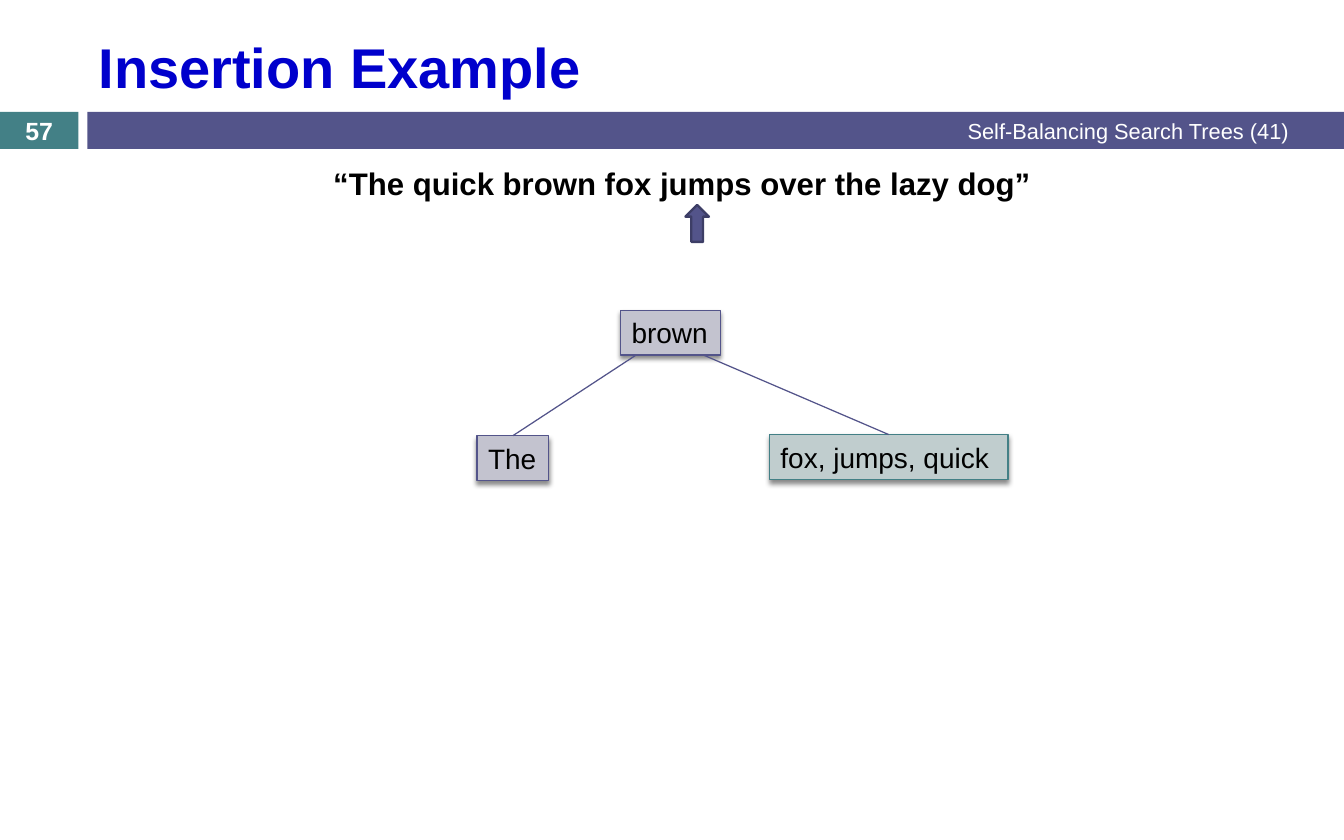
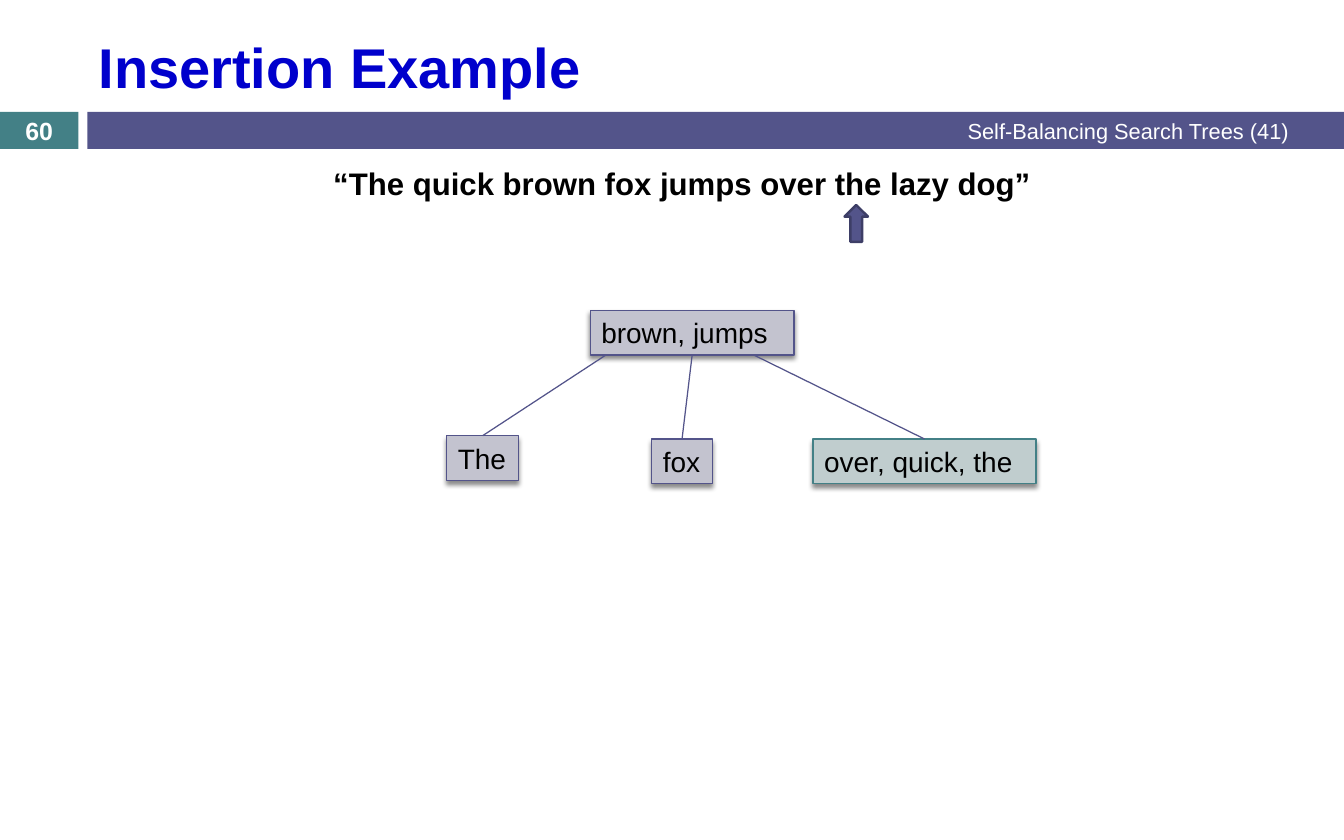
from lxml import etree
from pptx import Presentation
from pptx.dml.color import RGBColor
from pptx.enum.shapes import MSO_CONNECTOR, MSO_SHAPE
from pptx.enum.text import MSO_ANCHOR, MSO_AUTO_SIZE, PP_ALIGN
from pptx.oxml import parse_xml
from pptx.oxml.ns import nsdecls, qn
from pptx.util import Inches, Pt

FONT = "Arial"
INDIGO = RGBColor(0x53, 0x54, 0x8A)
DARK_INDIGO = RGBColor(0x3D, 0x3E, 0x66)
TEAL = RGBColor(0x43, 0x80, 0x86)
PALE_INDIGO = RGBColor(0xC3, 0xC3, 0xCF)
PALE_TEAL = RGBColor(0xC0, 0xCD, 0xCE)
TITLE_BLUE = RGBColor(0x00, 0x00, 0xCC)
BLACK = RGBColor(0x00, 0x00, 0x00)
WHITE = RGBColor(0xFF, 0xFF, 0xFF)

LINE_WIDTH = Pt(0.79)
NODE_HEIGHT = 0.4
ROOT_TOP = 2.77
SENTENCE = "“The quick brown fox jumps over the lazy dog” "
NODE_SHADOW = (
    f'<a:effectLst {nsdecls("a")}>'
    f'<a:outerShdw blurRad="{Pt(3)}" dist="{Pt(2.4)}" dir="5400000" rotWithShape="0">'
    '<a:srgbClr val="000000"><a:alpha val="45000"/></a:srgbClr>'
    "</a:outerShdw></a:effectLst>"
)

# Root: (text, left, width).
# Children: (text, left, top, width, branch start), where a branch start
# of None means the middle of the root's lower side.
TREES = [
    {
        "number": "57",
        "arrow_left": 6.12,
        "root": ("brown", 5.54, 0.89),
        "children": [
            ("The", 4.26, 3.89, 0.64, 5.68),
            ("fox, jumps, quick", 6.87, 3.88, 2.13, 6.28),
        ],
    },
    {
        "number": "60",
        "arrow_left": 7.54,
        "root": ("brown, jumps", 5.27, 1.82),
        "children": [
            ("The", 3.99, 3.89, 0.64, 5.41),
            ("fox", 5.82, 3.92, 0.54, None),
            ("over, quick, the", 7.26, 3.92, 1.99, 6.73),
        ],
    },
]


class TreeDeck:
    def __init__(self):
        self.presentation = Presentation()
        self.presentation.slide_width = Inches(12)
        self.presentation.slide_height = Inches(7.5)
        self.slide = None

    def new_slide(self, number):
        layout = self.presentation.slide_layouts[1]
        self.slide = self.presentation.slides.add_slide(layout)
        self.add_shape(MSO_SHAPE.RECTANGLE, (0, 1, 0.7, 0.33), TEAL)
        self.add_shape(MSO_SHAPE.RECTANGLE, (0.78, 1, 11.22, 0.33), INDIGO)
        self.add_label("Self-Balancing Search Trees (41)", (4.5, 0.99, 7.11, 0.35),
                       14, PP_ALIGN.RIGHT)
        self.add_label(number, (0, 1, 0.7, 0.33), 16, PP_ALIGN.CENTER, bold=True)

    def set_text(self, shape, text, size, color, align=PP_ALIGN.LEFT, bold=False,
                 anchor=MSO_ANCHOR.TOP, wrap=True, fit=MSO_AUTO_SIZE.NONE):
        frame = shape.text_frame
        frame.text = text
        frame.word_wrap = wrap
        frame.auto_size = fit
        frame.vertical_anchor = anchor
        paragraph = frame.paragraphs[0]
        paragraph.alignment = align
        font = paragraph.runs[0].font
        font.name, font.size, font.bold = FONT, Pt(size), bold
        font.color.rgb = color
        return paragraph

    def place(self, shape, box):
        shape.left, shape.top, shape.width, shape.height = map(Inches, box)

    def add_title(self, text):
        title = self.slide.shapes.title
        self.place(title, (0.78, 0.19, 10.7, 0.8))
        self.set_text(title, text, 36, TITLE_BLUE, bold=True, anchor=MSO_ANCHOR.MIDDLE)

    def add_sentence(self, text):
        body = self.slide.placeholders[1]
        self.place(body, (1.67, 1.42, 8.92, 0.5))
        paragraph = self.set_text(body, text, 20, BLACK, PP_ALIGN.CENTER, bold=True)
        paragraph.space_before = Pt(7)
        properties = body.element.find(".//" + qn("a:pPr"))
        properties.set("marL", "0")
        properties.set("indent", "0")
        etree.SubElement(properties, qn("a:buNone"))

    def add_label(self, text, box, size, align, bold=False):
        label = self.slide.shapes.add_textbox(*map(Inches, box))
        self.set_text(label, text, size, WHITE, align, bold, MSO_ANCHOR.MIDDLE)

    def add_shape(self, kind, box, fill, line=None, line_width=LINE_WIDTH):
        shape = self.slide.shapes.add_shape(kind, *map(Inches, box))
        shape.shadow.inherit = False
        shape.fill.solid()
        shape.fill.fore_color.rgb = fill
        if line is None:
            shape.line.fill.background()
        else:
            shape.line.color.rgb = line
            shape.line.width = line_width
        return shape

    def add_word_arrow(self, left):
        self.add_shape(MSO_SHAPE.UP_ARROW, (left, 1.83, 0.21, 0.33),
                       INDIGO, DARK_INDIGO, Pt(1.5))

    def add_node(self, text, left, top, width):
        """Add a tree node; one that holds three words is overfull and teal."""
        words = len(text.split(", "))
        fill, line = (PALE_TEAL, TEAL) if words == 3 else (PALE_INDIGO, INDIGO)
        node = self.add_shape(MSO_SHAPE.RECTANGLE, (left, top, width, NODE_HEIGHT),
                              fill, line)
        properties = node.element.spPr
        properties.replace(properties.find(qn("a:effectLst")), parse_xml(NODE_SHADOW))
        self.set_text(node, text, 18, BLACK, wrap=words > 1,
                      fit=MSO_AUTO_SIZE.SHAPE_TO_FIT_TEXT)
        return node

    def add_branch(self, root, child, start):
        begin_x = root.left + root.width // 2 if start is None else Inches(start)
        branch = self.slide.shapes.add_connector(
            MSO_CONNECTOR.STRAIGHT, begin_x, root.top + root.height,
            child.left + child.width // 2, child.top)
        if start is None:
            branch.begin_connect(root, 2)
        branch.end_connect(child, 0)
        branch.line.color.rgb = INDIGO
        branch.line.width = LINE_WIDTH
        etree.SubElement(branch.element.spPr, qn("a:effectLst"))

    def add_tree(self, root, children):
        text, left, width = root
        root_node = self.add_node(text, left, ROOT_TOP, width)
        for *node, start in children:
            self.add_branch(root_node, self.add_node(*node), start)


def main():
    deck = TreeDeck()
    for tree in TREES:
        deck.new_slide(tree["number"])
        deck.add_title("Insertion Example")
        deck.add_sentence(SENTENCE)
        deck.add_word_arrow(tree["arrow_left"])
        deck.add_tree(tree["root"], tree["children"])
    deck.presentation.save("out.pptx")


if __name__ == "__main__":
    main()
